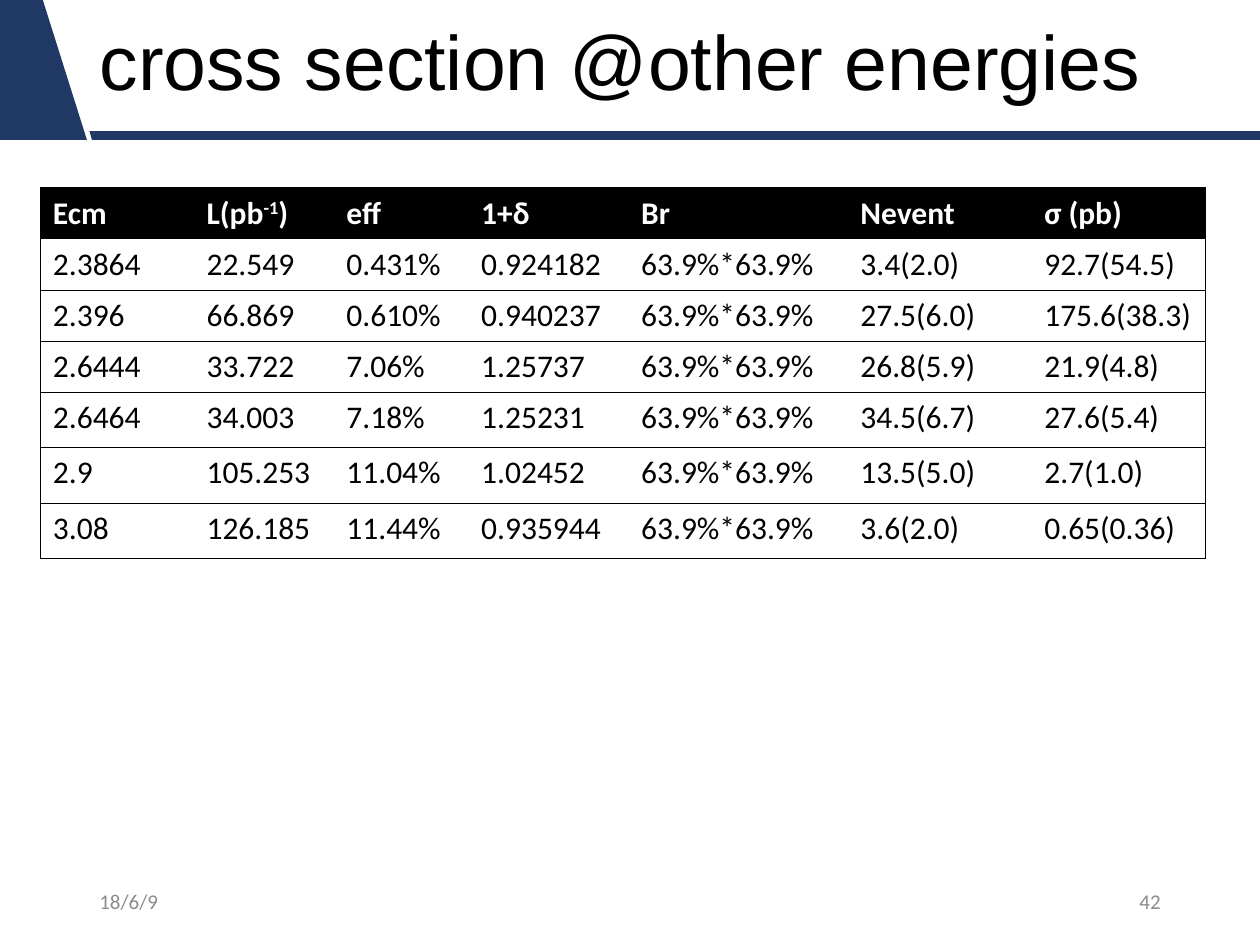
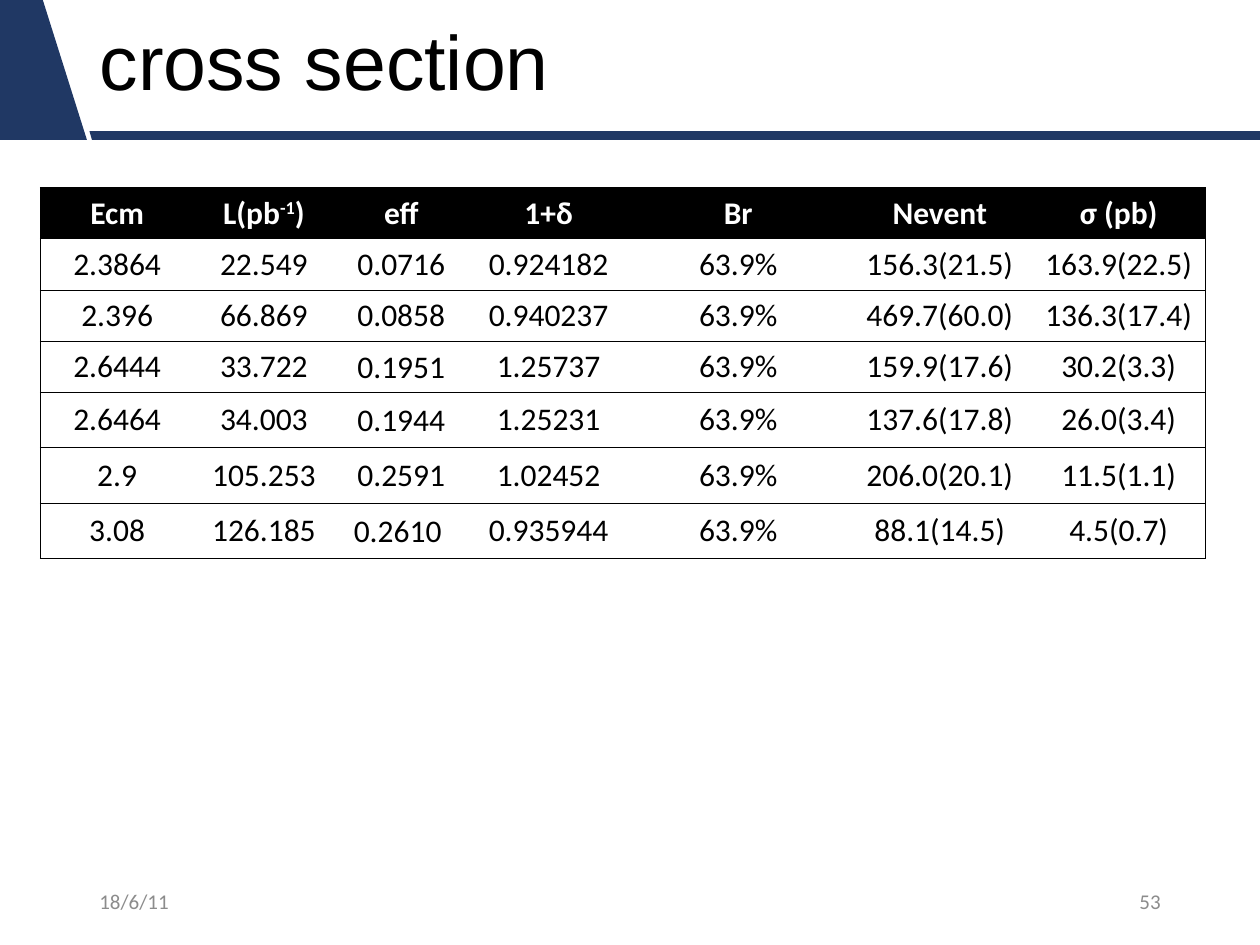
"""Build two slides that tabulate cross sections at several collision energies."""
from dataclasses import dataclass

from lxml import etree
from pptx import Presentation
from pptx.dml.color import RGBColor
from pptx.enum.text import MSO_ANCHOR, PP_ALIGN
from pptx.oxml.ns import qn
from pptx.util import Emu, Pt

LEFT, CENTER, RIGHT = PP_ALIGN.LEFT, PP_ALIGN.CENTER, PP_ALIGN.RIGHT
TOP, MIDDLE = MSO_ANCHOR.TOP, MSO_ANCHOR.MIDDLE
EMU_PER_PX = 9144
SLIDE_WIDTH, SLIDE_HEIGHT = 1000, 750
TITLE_ONLY = 5
NAVY, BLACK, WHITE, GRAY = "203864", "000000", "FFFFFF", "8C8C8C"
TITLE_FONT, BODY_FONT = "Arial", "Calibri"
NO_STYLE_ID = "{2D5ABB26-0587-4C30-8999-92F81FD0307C}"
BORDER_WIDTH = Pt(0.5)

BANDS = (
    ((34, 0), (69, 111), (0, 111), (0, 0)),
    ((71, 104), (1000, 104), (1000, 111), (73, 111)),
)
COLUMN_WIDTHS = (122, 111, 107, 127, 174, 146, 138)
ROW_HEIGHTS = (40, 40, 40, 40, 44, 44, 44)
HEADERS = ("Ecm", "L(pb^-1^)", "eff", "1+δ", "Br", "Nevent", "σ (pb)")
ENERGY_POINTS = (
    ("2.3864", "22.549", "0.924182"),
    ("2.396", "66.869", "0.940237"),
    ("2.6444", "33.722", "1.25737"),
    ("2.6464", "34.003", "1.25231"),
    ("2.9", "105.253", "1.02452"),
    ("3.08", "126.185", "0.935944"),
)


@dataclass(frozen=True)
class Box:
    """Place and size in px."""
    left: int
    top: int
    width: int
    height: int

    def emu(self) -> tuple:
        """Return the four lengths in EMU."""
        return tuple(px(v) for v in (self.left, self.top, self.width, self.height))


@dataclass(frozen=True)
class TextStyle:
    """Font settings of a run."""
    font: str
    size: int
    color: str
    bold: bool = False


@dataclass(frozen=True)
class CrossSectionSlide:
    """Content of one slide; results hold efficiency, events and cross section."""
    title: str
    date: str
    number: str
    branching: str
    results: tuple
    alignment: PP_ALIGN
    body_anchor: MSO_ANCHOR
    tight_cells: frozenset = frozenset()


TITLE_BOX = Box(69, 0, 931, 104)
TABLE_BOX = Box(32, 149, sum(COLUMN_WIDTHS), sum(ROW_HEIGHTS))
DATE_BOX = Box(69, 695, 225, 40)
NUMBER_BOX = Box(706, 695, 225, 40)
TITLE_STYLE = TextStyle(TITLE_FONT, 44, BLACK)
HEADER_STYLE = TextStyle(BODY_FONT, 18, WHITE, True)
BODY_STYLE = TextStyle(BODY_FONT, 18, BLACK)
FOOTER_STYLE = TextStyle(BODY_FONT, 12, GRAY)

SLIDES = (
    CrossSectionSlide(
        "cross section @other energies", "18/6/9", "42", "63.9%*63.9%",
        (
            ("0.431%", "3.4(2.0)", "92.7(54.5)"),
            ("0.610%", "27.5(6.0)", "175.6(38.3)"),
            ("7.06%", "26.8(5.9)", "21.9(4.8)"),
            ("7.18%", "34.5(6.7)", "27.6(5.4)"),
            ("11.04%", "13.5(5.0)", "2.7(1.0)"),
            ("11.44%", "3.6(2.0)", "0.65(0.36)"),
        ),
        LEFT, TOP,
    ),
    CrossSectionSlide(
        "cross section", "18/6/11", "53", "63.9%",
        (
            ("0.0716", "156.3(21.5)", "163.9(22.5)"),
            ("0.0858", "469.7(60.0)", "136.3(17.4)"),
            ("0.1951", "159.9(17.6)", "30.2(3.3)"),
            ("0.1944", "137.6(17.8)", "26.0(3.4)"),
            ("0.2591", "206.0(20.1)", "11.5(1.1)"),
            ("0.2610 ", "88.1(14.5)", "4.5(0.7)"),
        ),
        CENTER, MIDDLE,
        frozenset({(row, 2) for row in range(1, 7)} | {(1, 5), (1, 6)}),
    ),
)


def px(length: int) -> Emu:
    """Turn px into EMU."""
    return Emu(length * EMU_PER_PX)


def rgb(color: str) -> RGBColor:
    """Turn a hex string into a colour."""
    return RGBColor.from_string(color)


def write(text_frame, text: str, style: TextStyle, alignment: PP_ALIGN):
    """Write one paragraph run by run, with superscripts between carets."""
    paragraph = text_frame.paragraphs[0]
    paragraph.alignment = alignment
    for index, part in enumerate(text.split("^")):
        run = paragraph.add_run()
        run.text = part
        run.font.name = style.font
        run.font.size = Pt(style.size)
        run.font.bold = style.bold
        run.font.color.rgb = rgb(style.color)
        if index % 2:
            run.font._element.set("baseline", "30000")
    return paragraph


def add_bands(slide) -> None:
    """Draw the corner wedge and the rule under the title."""
    for start, *points in BANDS:
        builder = slide.shapes.build_freeform(*start, scale=EMU_PER_PX)
        builder.add_line_segments(points, close=True)
        shape = builder.convert_to_shape()
        shape.shadow.inherit = False
        shape.fill.solid()
        shape.fill.fore_color.rgb = rgb(NAVY)
        shape.line.fill.background()


def set_title(slide, text: str) -> None:
    """Place and fill the title placeholder."""
    title = slide.shapes.title
    title.left, title.top, title.width, title.height = TITLE_BOX.emu()
    title.text_frame.vertical_anchor = MIDDLE
    paragraph = write(title.text_frame, text, TITLE_STYLE, LEFT)
    paragraph.line_spacing = 0.9


def add_footer(slide, box: Box, text: str, alignment: PP_ALIGN) -> None:
    """Add a small grey text at the foot of the slide."""
    text_frame = slide.shapes.add_textbox(*box.emu()).text_frame
    text_frame.word_wrap = True
    text_frame.vertical_anchor = MIDDLE
    write(text_frame, text, FOOTER_STYLE, alignment)


def set_borders(cell, sides: str) -> None:
    """Draw thin black borders on the named sides of a cell."""
    properties = cell._tc.get_or_add_tcPr()
    for side in sides:
        line = etree.SubElement(properties, qn(f"a:ln{side}"), w=str(BORDER_WIDTH))
        fill = etree.SubElement(line, qn("a:solidFill"))
        etree.SubElement(fill, qn("a:srgbClr"), val=BLACK)


def add_results_table(slide, content: CrossSectionSlide) -> None:
    """Add the table of energies and measured cross sections."""
    rows = [HEADERS]
    for (energy, luminosity, correction), (efficiency, events, sigma) in zip(
            ENERGY_POINTS, content.results):
        rows.append((energy, luminosity, efficiency, correction,
                     content.branching, events, sigma))
    frame = slide.shapes.add_table(len(rows), len(HEADERS), *TABLE_BOX.emu())
    table = frame.table
    table._tbl.tblPr.find(qn("a:tableStyleId")).text = NO_STYLE_ID
    table.horz_banding = False
    for column, width in zip(table.columns, COLUMN_WIDTHS):
        column.width = px(width)
    for row, height in zip(table.rows, ROW_HEIGHTS):
        row.height = px(height)
    last_column = len(HEADERS) - 1
    for row_index, values in enumerate(rows):
        is_header = row_index == 0
        for column_index, value in enumerate(values):
            cell = table.cell(row_index, column_index)
            left = "L" if column_index == 0 else ""
            right = "R" if column_index == last_column else ""
            set_borders(cell, left + right + "TB")
            if is_header:
                cell.fill.solid()
                cell.fill.fore_color.rgb = rgb(BLACK)
            else:
                cell.fill.background()
            cell.vertical_anchor = TOP if is_header else content.body_anchor
            if (row_index, column_index) in content.tight_cells:
                cell.margin_left = cell.margin_top = cell.margin_right = px(1)
                cell.margin_bottom = 0
            style = HEADER_STYLE if is_header else BODY_STYLE
            write(cell.text_frame, value, style, content.alignment)


def main() -> None:
    """Build and save the presentation."""
    presentation = Presentation()
    presentation.slide_width = px(SLIDE_WIDTH)
    presentation.slide_height = px(SLIDE_HEIGHT)
    layout = presentation.slide_layouts[TITLE_ONLY]
    for content in SLIDES:
        slide = presentation.slides.add_slide(layout)
        add_bands(slide)
        set_title(slide, content.title)
        add_results_table(slide, content)
        add_footer(slide, DATE_BOX, content.date, LEFT)
        add_footer(slide, NUMBER_BOX, content.number, RIGHT)
    presentation.save("out.pptx")


if __name__ == "__main__":
    main()
